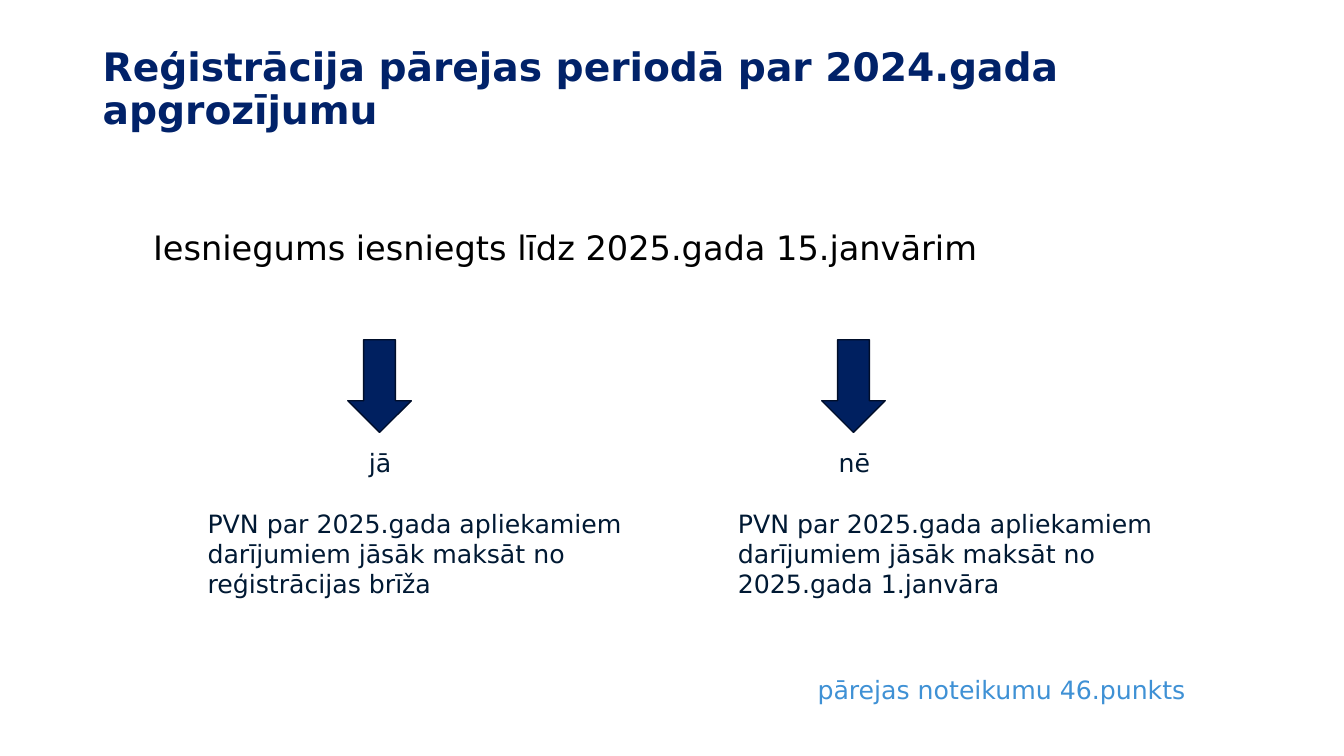
"""Build a slide on registration in the transition period for 2024 turnover."""
from pptx import Presentation
from pptx.dml.color import RGBColor
from pptx.enum.shapes import MSO_SHAPE
from pptx.enum.text import MSO_ANCHOR
from pptx.util import Inches, Pt

FONT = "DejaVu Sans"
TITLE_BLUE = RGBColor(0x01, 0x22, 0x69)
ARROW_BLUE = RGBColor(0x00, 0x20, 0x60)
ARROW_EDGE = RGBColor(0x00, 0x0E, 0x2A)
BODY_NAVY = RGBColor(0x00, 0x19, 0x33)
LIGHT_BLUE = RGBColor(0x3F, 0x91, 0xD5)
BLACK = RGBColor(0x00, 0x00, 0x00)

TITLE = "Reģistrācija pārejas periodā par 2024.gada apgrozījumu"
QUESTION = "Iesniegums iesniegts līdz 2025.gada 15.janvārim"
REFERENCE = "pārejas noteikumu 46.punkts"
BRANCHES = [
    {"arrow": 3.45, "label": 3.56, "result": 1.96, "answer": "jā",
     "text": "PVN par 2025.gada apliekamiem darījumiem jāsāk maksāt no reģistrācijas brīža"},
    {"arrow": 8.15, "label": 8.22, "result": 7.22, "answer": "nē",
     "text": "PVN par 2025.gada apliekamiem darījumiem jāsāk maksāt no 2025.gada 1.janvāra"},
]


def add_text(page, text, left, top, width, height, size=18, color=BODY_NAVY):
    box = page.shapes.add_textbox(Inches(left), Inches(top), Inches(width), Inches(height))
    box.text_frame.word_wrap = True
    box.text_frame.text = text
    font = box.text_frame.paragraphs[0].runs[0].font
    font.name, font.size, font.color.rgb = FONT, Pt(size), color
    return box


def add_arrow(page, left):
    arrow = page.shapes.add_shape(
        MSO_SHAPE.DOWN_ARROW, Inches(left), Inches(3.37), Inches(0.63), Inches(0.92))
    arrow.shadow.inherit = False
    arrow.fill.solid()
    arrow.fill.fore_color.rgb = ARROW_BLUE
    arrow.line.color.rgb = ARROW_EDGE
    arrow.line.width = Pt(1)


def main():
    deck = Presentation()
    deck.slide_width, deck.slide_height = Inches(13.33), Inches(7.5)
    page = deck.slides.add_slide(deck.slide_layouts[6])

    title = add_text(page, TITLE, 0.92, 0.4, 10.58, 0.99, 28, TITLE_BLUE)
    title.text_frame.vertical_anchor = MSO_ANCHOR.MIDDLE
    para = title.text_frame.paragraphs[0]
    para.line_spacing = 0.9
    para.runs[0].font.bold = True

    add_text(page, QUESTION, 1.42, 2.2, 10.08, 0.5, 24, BLACK)
    for branch in BRANCHES:
        add_arrow(page, branch["arrow"])
        add_text(page, branch["answer"], branch["label"], 4.39, 0.72, 0.4)
        add_text(page, branch["text"], branch["result"], 4.99, 4.88, 1.01)
    add_text(page, REFERENCE, 8.01, 6.64, 4.41, 0.4, color=LIGHT_BLUE)
    deck.save("out.pptx")


if __name__ == "__main__":
    main()
